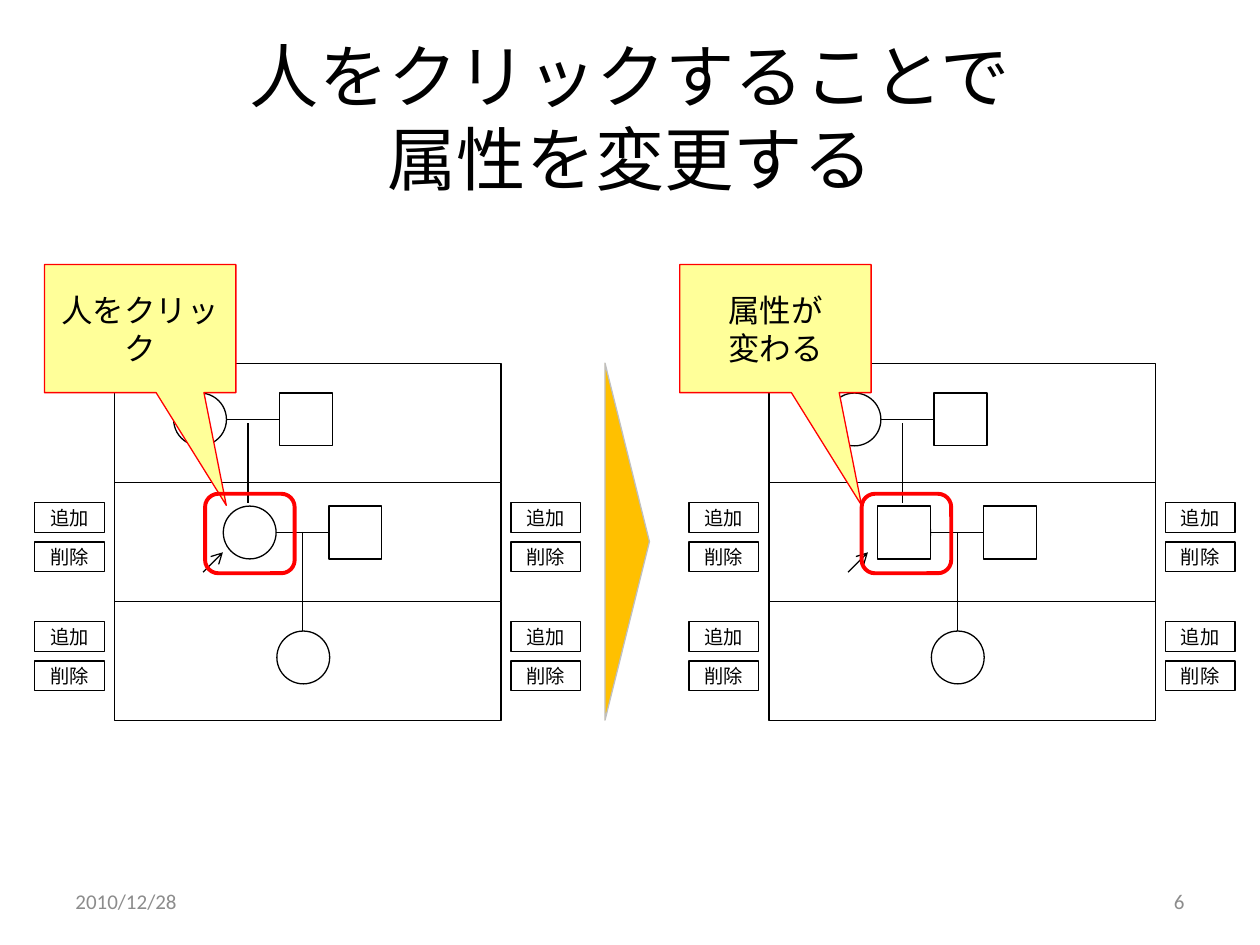
import dataclasses
import itertools
from typing import Optional

import lxml.etree
import pptx
import pptx.dml.color
import pptx.enum.shapes
import pptx.enum.text
import pptx.oxml.ns
import pptx.shapes.autoshape
import pptx.shapes.connector
import pptx.slide
import pptx.text.text
import pptx.util

Pt = pptx.util.Pt
RGBColor = pptx.dml.color.RGBColor
Geometry = pptx.enum.shapes.MSO_SHAPE
ConnectorKind = pptx.enum.shapes.MSO_CONNECTOR
Align = pptx.enum.text.PP_ALIGN

BLACK = RGBColor(0x00, 0x00, 0x00)
WHITE = RGBColor(0xFF, 0xFF, 0xFF)
RED = RGBColor(0xFF, 0x00, 0x00)
YELLOW = RGBColor(0xFF, 0xFF, 0x99)
AMBER = RGBColor(0xFF, 0xC0, 0x00)
SILVER = RGBColor(0xBF, 0xBF, 0xBF)
GRAY = RGBColor(0x8C, 0x8C, 0x8C)

FONT = "Calibri"
PERSON_SIZE = 30.2
ROW_TOP = 207.6
ROW_HEIGHT = 68
BUTTON_GAP = 22.6


@dataclasses.dataclass(frozen=True)
class Box:
    left: float
    top: float
    width: float
    height: float

    def lengths(self) -> tuple:
        return Pt(self.left), Pt(self.top), Pt(self.width), Pt(self.height)


@dataclasses.dataclass(frozen=True)
class Person:
    left: float
    top: float
    geometry: Geometry


@dataclasses.dataclass(frozen=True)
class Link:
    start: tuple[float, float]
    end: tuple[float, float]
    kind: ConnectorKind = ConnectorKind.STRAIGHT


@dataclasses.dataclass(frozen=True)
class Panel:
    offset: float
    callout_left: float
    callout_lines: tuple[str, ...]
    pointer_left: float
    highlight_left: float
    changed: bool


PEOPLE = (
    Person(99.2, 224.6, Geometry.OVAL),
    Person(159.8, 224.6, Geometry.RECTANGLE),
    Person(188, 289.2, Geometry.RECTANGLE),
    Person(158.2, 360.6, Geometry.OVAL),
)
CLICKED_PERSON = Person(127.6, 289.2, Geometry.OVAL)
LINKS = (
    Link((129.4, 239.8), (159.8, 239.8), ConnectorKind.ELBOW),
    Link((157.8, 304.4), (188, 304.4), ConnectorKind.ELBOW),
    Link((141.8, 241.8), (141.8, 287.2)),
    Link((173, 304), (173, 360.6)),
)
PANELS = (
    Panel(0, 25.4, ("人をクリック",), 116, 117.2, False),
    Panel(374, 388.4, ("属性が", "変わる"), 484.6, 492.4, True),
)


def write_text(
    frame: pptx.text.text.TextFrame,
    lines: tuple[str, ...],
    size: float,
    color: RGBColor = BLACK,
    alignment: Align = Align.CENTER,
    one_paragraph: bool = False,
) -> None:
    frame.word_wrap = True
    frame.vertical_anchor = pptx.enum.text.MSO_ANCHOR.MIDDLE
    paragraph = frame.paragraphs[0]
    for index, line in enumerate(lines):
        if index and one_paragraph:
            paragraph.add_line_break()
        elif index:
            paragraph = frame.add_paragraph()
        paragraph.alignment = alignment
        run = paragraph.add_run()
        run.text = line
        run.font.name = FONT
        run.font.size = Pt(size)
        run.font.color.rgb = color


def add_shape(
    slide: pptx.slide.Slide,
    geometry: Geometry,
    box: Box,
    fill: Optional[RGBColor] = None,
    line: RGBColor = BLACK,
    line_width: float = 0.75,
) -> pptx.shapes.autoshape.Shape:
    shape = slide.shapes.add_shape(geometry, *box.lengths())
    shape.shadow.inherit = False
    if fill is None:
        shape.fill.background()
    else:
        shape.fill.solid()
        shape.fill.fore_color.rgb = fill
    shape.line.color.rgb = line
    shape.line.width = Pt(line_width)
    return shape


def add_text(
    slide: pptx.slide.Slide, box: Box, lines: tuple[str, ...], size: float,
    color: RGBColor, alignment: Align,
) -> None:
    text_box = slide.shapes.add_textbox(*box.lengths())
    write_text(text_box.text_frame, lines, size, color, alignment, one_paragraph=True)


def add_person(
    slide: pptx.slide.Slide, person: Person, offset: float,
    fill: Optional[RGBColor] = None,
) -> None:
    box = Box(person.left + offset, person.top, PERSON_SIZE, PERSON_SIZE)
    add_shape(slide, person.geometry, box, fill)


def add_link(
    slide: pptx.slide.Slide, link: Link, offset: float = 0
) -> pptx.shapes.connector.Connector:
    connector = slide.shapes.add_connector(
        link.kind,
        Pt(link.start[0] + offset), Pt(link.start[1]),
        Pt(link.end[0] + offset), Pt(link.end[1]),
    )
    connector.line.color.rgb = BLACK
    connector.line.width = Pt(0.75)
    lxml.etree.SubElement(connector._element.spPr, pptx.oxml.ns.qn("a:effectLst"))
    return connector


def add_button(slide: pptx.slide.Slide, left: float, top: float, label: str) -> None:
    button = add_shape(slide, Geometry.RECTANGLE, Box(left, top, 39.8, 17))
    frame = button.text_frame
    frame.margin_left = frame.margin_right = frame.margin_top = frame.margin_bottom = 0
    write_text(frame, (label,), 11)


def add_panel(slide: pptx.slide.Slide, panel: Panel) -> None:
    for person in PEOPLE:
        add_person(slide, person, panel.offset)
    add_person(slide, CLICKED_PERSON, panel.offset, BLACK if panel.changed else None)
    for link in LINKS:
        add_link(slide, link, panel.offset)
    for row, left in itertools.product(range(2), (292, 19.8)):
        for index, label in enumerate(("追加", "削除")):
            top = 287.2 + row * ROW_HEIGHT + index * BUTTON_GAP
            add_button(slide, left + panel.offset, top, label)
    for row in range(3):
        top = ROW_TOP + row * ROW_HEIGHT
        add_shape(slide, Geometry.RECTANGLE, Box(65.4 + panel.offset, top, 221, ROW_HEIGHT))
    if panel.changed:
        square = dataclasses.replace(CLICKED_PERSON, geometry=Geometry.RECTANGLE)
        add_person(slide, square, panel.offset, WHITE)
    callout = add_shape(
        slide, Geometry.RECTANGULAR_CALLOUT,
        Box(panel.callout_left, 151.2, 109.4, 73.2), YELLOW, RED,
    )
    callout.adjustments[0] = 0.45
    callout.adjustments[1] = 1.38
    write_text(callout.text_frame, panel.callout_lines, 18)
    pointer = add_link(
        slide, Link((panel.pointer_left, 327), (panel.pointer_left + 11.4, 315.6))
    )
    lxml.etree.SubElement(
        pointer.line._get_or_add_ln(), pptx.oxml.ns.qn("a:tailEnd"), type="arrow"
    )
    highlight = Box(panel.highlight_left, 282.2, 51.2, 45.4)
    add_shape(slide, Geometry.ROUNDED_RECTANGLE, highlight, None, RED, 2.25)


def main() -> None:
    presentation = pptx.Presentation()
    presentation.slide_width = Pt(720)
    presentation.slide_height = Pt(540)
    slide = presentation.slides.add_slide(presentation.slide_layouts[6])
    title = ("人をクリックすることで", "属性を変更する")
    add_text(slide, Box(36, 21.6, 648, 90), title, 39.6, BLACK, Align.CENTER)
    for panel in PANELS:
        add_panel(slide, panel)
    triangle = add_shape(
        slide, Geometry.ISOSCELES_TRIANGLE, Box(256.4, 296.8, 204, 25.4), AMBER, SILVER
    )
    triangle.rotation = 90
    add_text(slide, Box(36, 500.5, 168, 28.8), ("2010/12/28",), 12, GRAY, Align.LEFT)
    add_text(slide, Box(516, 500.5, 168, 28.8), ("6",), 12, GRAY, Align.RIGHT)
    presentation.save("out.pptx")


if __name__ == "__main__":
    main()
